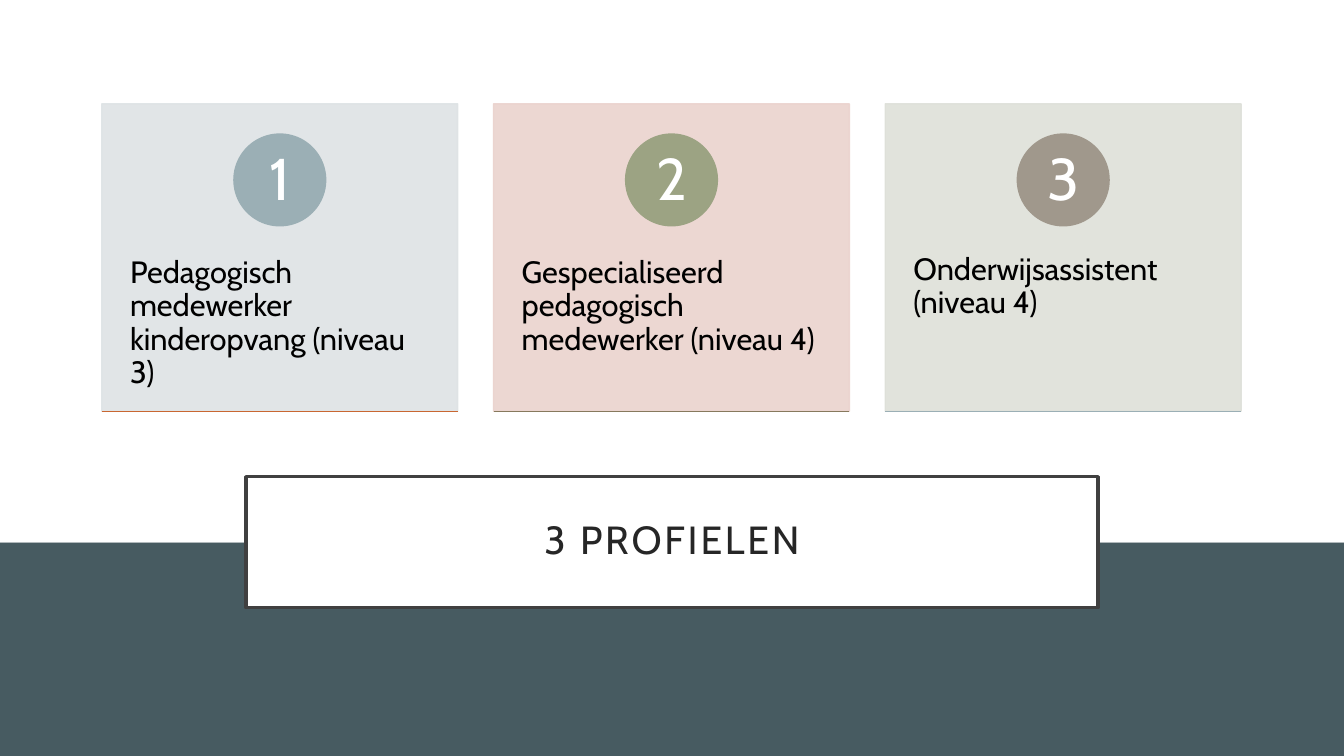
"""Build a slide that presents three training profiles as numbered cards."""
from pptx import Presentation
from pptx.dml.color import RGBColor
from pptx.enum.shapes import MSO_CONNECTOR, MSO_SHAPE
from pptx.enum.text import MSO_ANCHOR, PP_ALIGN
from pptx.oxml.ns import qn
from pptx.util import Inches, Pt
from lxml.etree import SubElement

TITLE = "3 PROFIELEN"
PROFILES = [
    ("Pedagogisch medewerker kinderopvang (niveau 3)", "mist", "steel", "orange"),
    ("Gespecialiseerd pedagogisch medewerker (niveau 4)", "blush", "sage", "olive"),
    ("Onderwijsassistent (niveau 4)", "linen", "taupe", "steel"),
]
COLORS = {
    "white": "FFFFFF", "black": "000000", "slate": "475B61",
    "frame": "404040", "title": "262626",
    "mist": "DEE3E5", "blush": "EBD3CE", "linen": "DEE0D9",
    "steel": "9BAFB5", "sage": "9CA383", "taupe": "A0988C",
    "orange": "C96731", "olive": "87795D",
}
FONT = "Cabin"
SLIDE_W, SLIDE_H, HORIZON = 13.33, 7.5, 5.38
CARD_X, CARD_Y, CARD_W, CARD_H, PITCH = 1.01, 1.03, 3.53, 3.05, 3.885
CIRCLE, CIRCLE_Y = 0.91, 1.33
NUMBER, NUMBER_Y = 0.65, 1.47
LABEL_Y, LABEL_H = 2.19, 1.83


def rgb(name):
    return RGBColor.from_string(COLORS[name])


def add_block(s, kind, box, fill, line=None, width=1, alpha=None):
    sp = s.shapes.add_shape(kind, *map(Inches, box))
    sp.shadow.inherit = False
    sp.fill.solid()
    sp.fill.fore_color.rgb = rgb(fill)
    if line:
        sp.line.color.rgb = rgb(line)
        sp.line.width = Pt(width)
    else:
        sp.line.fill.background()
    if alpha:
        for clr in sp._element.spPr.iter(qn("a:srgbClr")):
            SubElement(clr, qn("a:alpha")).set("val", str(alpha * 1000))
    return sp


def set_text(sp, text, size, color, margins, align, anchor):
    tf = sp.text_frame
    tf.word_wrap = True
    tf.vertical_anchor = anchor
    tf.margin_left = tf.margin_right = Inches(margins[0])
    tf.margin_top = tf.margin_bottom = Inches(margins[1])
    p = tf.paragraphs[0]
    p.text = text
    p.alignment = align
    p.line_spacing = 0.9
    p.font.name = FONT
    p.font.size = Pt(size)
    p.font.color.rgb = rgb(color)
    return p


def add_label(s, box, *text_args):
    set_text(s.shapes.add_textbox(*map(Inches, box)), *text_args)


def add_rule(s, x, y, w, color):
    cx = s.shapes.add_connector(
        MSO_CONNECTOR.STRAIGHT, Inches(x), Inches(y), Inches(x + w), Inches(y))
    cx.line.color.rgb = rgb(color)
    cx.line.width = Pt(1)
    SubElement(cx._element.spPr, qn("a:effectLst"))


def add_card(s, number, text, card, circle, rule):
    x = CARD_X + (number - 1) * PITCH
    mid = x + CARD_W / 2
    add_block(s, MSO_SHAPE.RECTANGLE, (x, CARD_Y, CARD_W, CARD_H), card, card, alpha=90)
    add_label(s, (x, LABEL_Y, CARD_W, LABEL_H),
              text, 22, "black", (0.28, 0.36), PP_ALIGN.LEFT, MSO_ANCHOR.TOP)
    add_block(s, MSO_SHAPE.OVAL, (mid - CIRCLE / 2, CIRCLE_Y, CIRCLE, CIRCLE), circle, circle)
    add_label(s, (mid - NUMBER / 2, NUMBER_Y, NUMBER, NUMBER),
              str(number), 42, "white", (0.07, 0.01), PP_ALIGN.CENTER, MSO_ANCHOR.MIDDLE)
    add_rule(s, x, CARD_Y + CARD_H, CARD_W, rule)


def main():
    prs = Presentation()
    prs.slide_width, prs.slide_height = Inches(SLIDE_W), Inches(SLIDE_H)
    s = prs.slides.add_slide(prs.slide_layouts[6])
    add_block(s, MSO_SHAPE.RECTANGLE, (0, HORIZON, SLIDE_W, SLIDE_H - HORIZON), "slate")
    add_block(s, MSO_SHAPE.RECTANGLE, (0, 0, SLIDE_W, HORIZON), "white")
    title = add_block(s, MSO_SHAPE.RECTANGLE, (2.44, 4.73, 8.45, 1.3), "white", "frame", 2.5)
    p = set_text(title, TITLE, 28, "title", (0.2, 0.2), PP_ALIGN.CENTER, MSO_ANCHOR.MIDDLE)
    p.runs[0]._r.get_or_add_rPr().set("spc", "200")
    for number, profile in enumerate(PROFILES, 1):
        add_card(s, number, *profile)
    prs.save("out.pptx")


if __name__ == "__main__":
    main()
